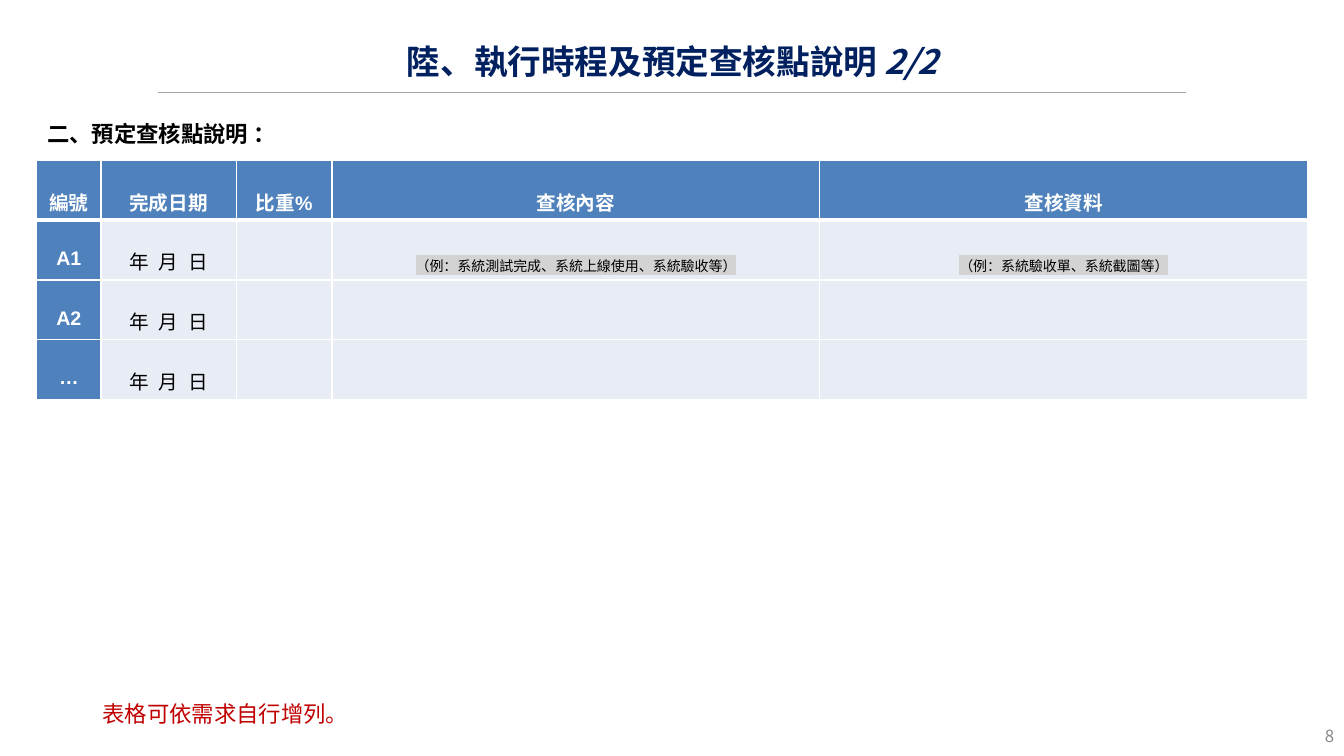
from lxml.etree import SubElement
from pptx import Presentation
from pptx.dml.color import RGBColor
from pptx.enum.shapes import MSO_CONNECTOR as CONNECTOR
from pptx.enum.text import MSO_ANCHOR as ANCHOR, PP_ALIGN as ALIGN
from pptx.oxml.ns import qn
from pptx.util import Pt

NAVY = RGBColor(0x00, 0x20, 0x60)
BLACK = RGBColor(0x00, 0x00, 0x00)
WHITE = RGBColor(0xFF, 0xFF, 0xFF)
RED = RGBColor(0xC0, 0x00, 0x00)
PAGE_GREY = RGBColor(0x88, 0x88, 0x88)
RULE_GREY = RGBColor(0xA5, 0xA5, 0xA5)
HIGHLIGHT = RGBColor(0xD3, 0xD3, 0xD3)
BLUE = RGBColor(0x4F, 0x81, 0xBD)
PALE = RGBColor(0xE8, 0xEC, 0xF4)
CJK = "Noto Sans CJK TC"


def add_run(paragraph, text, color, highlight=None, **formats):
    run = paragraph.add_run()
    run.text = text
    run.font.color.rgb = color
    props = run.font._element
    if highlight:
        mark = SubElement(props, qn("a:highlight"))
        SubElement(mark, qn("a:srgbClr"), val=str(highlight))
    for name, value in formats.items():
        setattr(run.font, name, value)
    SubElement(props, qn("a:ea"), typeface=CJK)
    return run


def add_label(box, runs, align=ALIGN.LEFT, anchor=ANCHOR.TOP, spacing=1.0):
    frame = slide.shapes.add_textbox(*map(Pt, box)).text_frame
    frame.word_wrap = True
    frame.vertical_anchor = anchor
    paragraph = frame.paragraphs[0]
    paragraph.alignment = align
    paragraph.line_spacing = spacing
    for text, color, formats in runs:
        add_run(paragraph, text, color, name=CJK, **formats)


prs = Presentation()
prs.slide_width, prs.slide_height = Pt(960), Pt(540)
slide = prs.slides.add_slide(prs.slide_layouts[6])

# Title and its rule
title_rule = slide.shapes.add_connector(
    CONNECTOR.STRAIGHT, Pt(113), Pt(65.8), Pt(847), Pt(65.8))
title_rule.line.color.rgb = RULE_GREY
title_rule.line.width = Pt(0.75)
SubElement(title_rule._element.spPr, qn("a:effectLst"))
title_format = {"size": Pt(24), "bold": True}
add_label((162.7, 22.3, 635, 42.5),
          [("陸、執行時程及預定查核點說明 ", NAVY, title_format),
           ("2/2", NAVY, {**title_format, "italic": True})],
          ALIGN.CENTER, ANCHOR.MIDDLE)

# Section heading
add_label((26.6, 80, 494, 25),
          [("二、預定查核點說明 ：", BLACK, {"size": Pt(16), "bold": True})],
          spacing=1.12)

# Checkpoint table
DATE = "年 月 日"
checkpoints = [
    ["編號", "完成日期", "比重%", "查核內容", "查核資料"],
    ["A1", DATE, "", "（例：系統測試完成、系統上線使用、系統驗收等）",
     "（例：系統驗收單、系統截圖等）"],
    ["A2", DATE, "", "", ""],
    ["…", DATE, "", "", ""],
]
widths = [46, 96.5, 68.5, 348.5, 348.5]
row_height = 42.6
table = slide.shapes.add_table(
    len(checkpoints), len(widths), Pt(26.2), Pt(114.8),
    Pt(sum(widths)), Pt(row_height * len(checkpoints))).table
for column, width in zip(table.columns, widths):
    column.width = Pt(width)

for r, row in enumerate(checkpoints):
    table.rows[r].height = Pt(row_height)
    for c, text in enumerate(row):
        cell = table.cell(r, c)
        heading = r == 0 or c == 0
        cell.vertical_anchor = ANCHOR.MIDDLE
        cell.margin_left = cell.margin_right = Pt(1.5)
        cell.margin_top = cell.margin_bottom = 0

        # Borders: a thick one under the header row
        for side in ("L", "R", "T", "B"):
            thick = (r, side) in ((0, "B"), (1, "T"))
            border = SubElement(cell._tc.get_or_add_tcPr(), qn(f"a:ln{side}"),
                                w=str(Pt(3 if thick else 1)))
            fill = SubElement(border, qn("a:solidFill"))
            SubElement(fill, qn("a:srgbClr"), val=str(WHITE))
        cell.fill.solid()
        cell.fill.fore_color.rgb = BLUE if heading else PALE

        if not text:
            continue
        example = not heading and c > 2
        paragraph = cell.text_frame.paragraphs[0]
        paragraph.alignment = ALIGN.CENTER
        paragraph.line_spacing = 2.5 if example else 1.79
        run = add_run(paragraph, text, WHITE if heading else BLACK,
                      HIGHLIGHT if example else None, name="Arial",
                      size=Pt(10 if example else 14), bold=heading)
        if text == DATE:
            run.font._element.set("spc", "195")

# Footnote and page number
add_label((66.2, 494, 634, 25),
          [("表格可依需求自行增列。", RED, {"size": Pt(16)})], spacing=1.12)
add_label((912, 511, 48, 29), [("8", PAGE_GREY, {"size": Pt(12)})],
          ALIGN.RIGHT, ANCHOR.MIDDLE)

prs.save("out.pptx")
